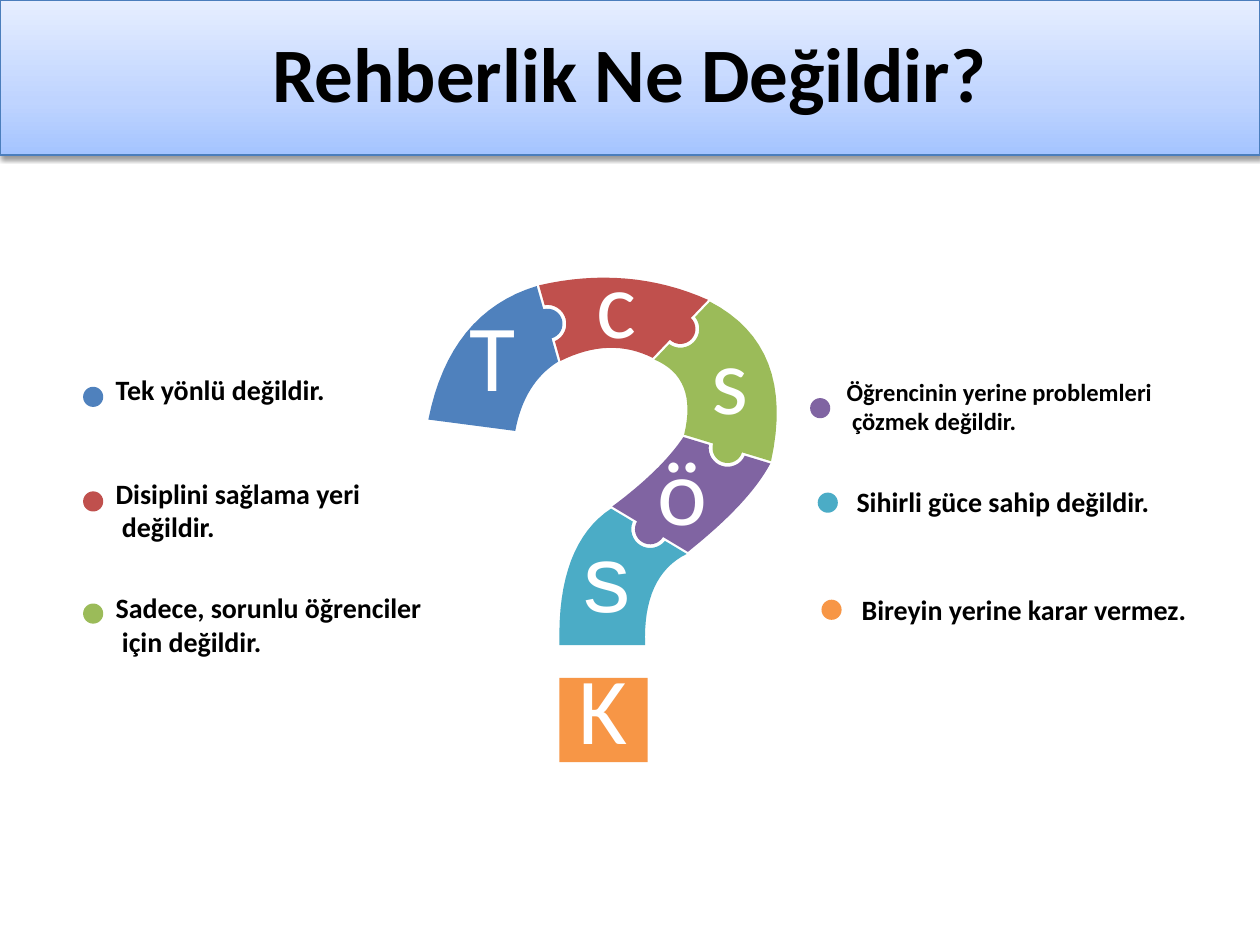
import math
from copy import deepcopy

from lxml import etree
from pptx import Presentation
from pptx.dml.color import RGBColor
from pptx.enum import shapes, text
from pptx.oxml import ns
from pptx.util import Inches, Pt

BLUE = RGBColor.from_string("4F81BD")
RED = RGBColor.from_string("C0504D")
GREEN = RGBColor.from_string("9BBB59")
PURPLE = RGBColor.from_string("8064A2")
TEAL = RGBColor.from_string("4BACC6")
ORANGE = RGBColor.from_string("F79646")
BLACK = RGBColor.from_string("000000")
WHITE = RGBColor.from_string("FFFFFF")
BANNER_LINE = RGBColor.from_string("4B7EBC")
BANNER_STOPS = [(0, RGBColor.from_string("A4C4FF")), (0.35, RGBColor.from_string("BFD4FF")),
                (1, RGBColor.from_string("E6EEFF"))]

TITLE = "Rehberlik Ne Değildir?"

# Statements: text, font size, text place, text width, dot place, colour
STATEMENTS = [
    ("Tek yönlü değildir.", 16, (0.82, 2.91), 2.19, (0.66, 3.07), BLUE),
    ("Disiplini sağlama yeri\n değildir.", 16, (0.82, 3.73), 2.47, (0.66, 3.9), RED),
    ("Sadece, sorunlu öğrenciler\n için değildir.", 16, (0.82, 4.64), 3.03, (0.66, 4.79), GREEN),
    ("Öğrencinin yerine problemleri\n çözmek değildir.", 14, (6.62, 2.94), 3.01, (6.43, 3.16), PURPLE),
    ("Sihirli güce sahip değildir.", 16, (6.7, 3.8), 2.94, (6.49, 3.91), TEAL),
    ("Bireyin yerine karar vermez.", 16, (6.74, 4.65), 3.21, (6.52, 4.76), ORANGE),
]
DOT_SIZE = 0.16

# Letters on the puzzle: text, place, font
LETTERS = [("T", (3.72, 2.62), "Calibri"), ("c", (4.7, 2.2), "Calibri"),
           ("s", (5.6, 2.8), "Calibri"), ("ö", (5.22, 3.68), "Calibri"),
           ("s", (4.63, 4.37), "Arial"), ("K", (4.59, 5.42), "Calibri")]
LETTER_SIZE = 0.38

# Joints between puzzle pieces: outer end, inner end
JOINTS = [((3.4, 3.33), (4.09, 3.42)), ((4.26, 2.27), (4.43, 2.87)),
          ((5.62, 2.38), (5.18, 2.84)), ((6.12, 3.66), (5.43, 3.45)),
          ((5.46, 4.38), (4.86, 4.02)), ((5.12, 5.12), (4.44, 5.12))]
# Puzzle pieces: colour, pull point of the outer side, pull point of the inner side
PIECES = [(BLUE, (3.57, 2.48), (4.16, 3.04)), (RED, (4.99, 2.1), (4.84, 2.67)),
          (GREEN, (6.32, 2.75), (5.54, 3)), (PURPLE, (5.95, 3.99), (5.25, 3.73)),
          (TEAL, (5.1, 4.57), (4.42, 4.32))]
KNOB_RADIUS = 0.12
GAP = 0.02
CURVE_STEPS = 16


def joint_edge(index, gap):
    """Points of a joint from outer to inner end, moved forward by the gap."""
    outer, inner = JOINTS[index]
    length = math.dist(outer, inner)
    along = [(b - a) / length for a, b in zip(outer, inner)]
    forward = (along[1], -along[0])

    def place(distance, advance):
        return tuple(a + distance * u + advance * f for a, u, f in zip(outer, along, forward))

    if index in (0, len(JOINTS) - 1):
        return [outer, inner]
    radius = KNOB_RADIUS + 1.5 * gap
    start = math.asin(gap / radius)
    angles = [start + (math.pi - 2 * start) * step / CURVE_STEPS for step in range(CURVE_STEPS + 1)]
    knob = [place(length / 2 - radius * math.cos(angle), radius * math.sin(angle)) for angle in angles]
    return [place(0, gap), *knob, place(length, gap)]


def curve(start, pull, end):
    """Inner points of a quadratic curve."""
    fractions = [step / CURVE_STEPS for step in range(1, CURVE_STEPS)]
    return [tuple((1 - t) ** 2 * a + 2 * t * (1 - t) * b + t * t * c
                  for a, b, c in zip(start, pull, end)) for t in fractions]


def piece_outline(index, outer_pull, inner_pull):
    back, front = joint_edge(index, GAP), joint_edge(index + 1, 0)
    points = [*back[::-1], *curve(back[0], outer_pull, front[0]),
              *front, *curve(front[-1], inner_pull, back[-1])]
    return [(Inches(x), Inches(y)) for x, y in points]


def paint(shape, colour):
    shape.shadow.inherit = False
    shape.fill.solid()
    shape.fill.fore_color.rgb = colour
    shape.line.fill.background()


def format_text(text_frame, size, colour, bold=False, font="Calibri"):
    for paragraph in text_frame.paragraphs:
        for run in paragraph.runs:
            run.font.size, run.font.name, run.font.bold = Pt(size), font, bold
            run.font.color.rgb = colour


def add_text(slide, content, place, width, height):
    text_frame = slide.shapes.add_textbox(*map(Inches, (*place, width, height))).text_frame
    text_frame.text = content
    text_frame.word_wrap = False
    return text_frame


def center(text_frame):
    text_frame.vertical_anchor = text.MSO_ANCHOR.MIDDLE
    text_frame.paragraphs[0].alignment = text.PP_ALIGN.CENTER


def add_banner(slide):
    title = slide.shapes.title
    title.left, title.top, title.width, title.height = map(Inches, (0, 0, 10, 1.23))
    title.fill.gradient()
    title.fill.gradient_angle = 90
    stop_list = title.element.spPr.find(".//" + ns.qn("a:gsLst"))
    stop_list.insert(1, deepcopy(stop_list[0]))
    for stop, (position, colour) in zip(title.fill.gradient_stops, BANNER_STOPS):
        stop.position, stop.color.rgb = position, colour
    title.line.color.rgb = BANNER_LINE
    title.line.width = Pt(0.75)
    # Soft shadow straight below the banner
    title.shadow.inherit = False
    effects = title.element.spPr.find(ns.qn("a:effectLst"))
    shadow = etree.SubElement(effects, ns.qn("a:outerShdw"), blurRad=str(int(Pt(3.1))),
                              dist=str(int(Pt(1.6))), dir="5400000", rotWithShape="0")
    colour = etree.SubElement(shadow, ns.qn("a:srgbClr"), val="000000")
    etree.SubElement(colour, ns.qn("a:alpha"), val="38000")

    text_frame = title.text_frame
    text_frame.text = TITLE
    text_frame.auto_size = text.MSO_AUTO_SIZE.NONE
    center(text_frame)
    text_frame.paragraphs[0].line_spacing = 0.9
    format_text(text_frame, 44, BLACK, bold=True)


def main():
    presentation = Presentation()
    presentation.slide_width, presentation.slide_height = Inches(10), Inches(7.5)
    slide = presentation.slides.add_slide(presentation.slide_layouts[5])
    add_banner(slide)

    # Question mark: puzzle pieces and the block at its foot
    for index, (colour, outer_pull, inner_pull) in enumerate(PIECES):
        points = piece_outline(index, outer_pull, inner_pull)
        builder = slide.shapes.build_freeform(*points[0])
        builder.add_line_segments(points[1:], close=True)
        paint(builder.convert_to_shape(), colour)
    foot = slide.shapes.add_shape(shapes.MSO_SHAPE.RECTANGLE, *map(Inches, (4.44, 5.38, 0.7, 0.67)))
    paint(foot, ORANGE)

    # Statements with their dots
    for content, size, place, width, dot_place, colour in STATEMENTS:
        dot_box = (*dot_place, DOT_SIZE, DOT_SIZE)
        paint(slide.shapes.add_shape(shapes.MSO_SHAPE.OVAL, *map(Inches, dot_box)), colour)
        height = 0.1 + len(content.splitlines()) * size * 1.2 / 72
        text_frame = add_text(slide, content, place, width, height)
        text_frame.auto_size = text.MSO_AUTO_SIZE.SHAPE_TO_FIT_TEXT
        format_text(text_frame, size, BLACK, bold=True)

    # Letters
    for letter, place, font in LETTERS:
        text_frame = add_text(slide, letter, place, LETTER_SIZE, LETTER_SIZE)
        text_frame.margin_left = text_frame.margin_right = 0
        text_frame.margin_top = text_frame.margin_bottom = 0
        center(text_frame)
        format_text(text_frame, 54, WHITE, font=font)

    presentation.save("out.pptx")


if __name__ == "__main__":
    main()
